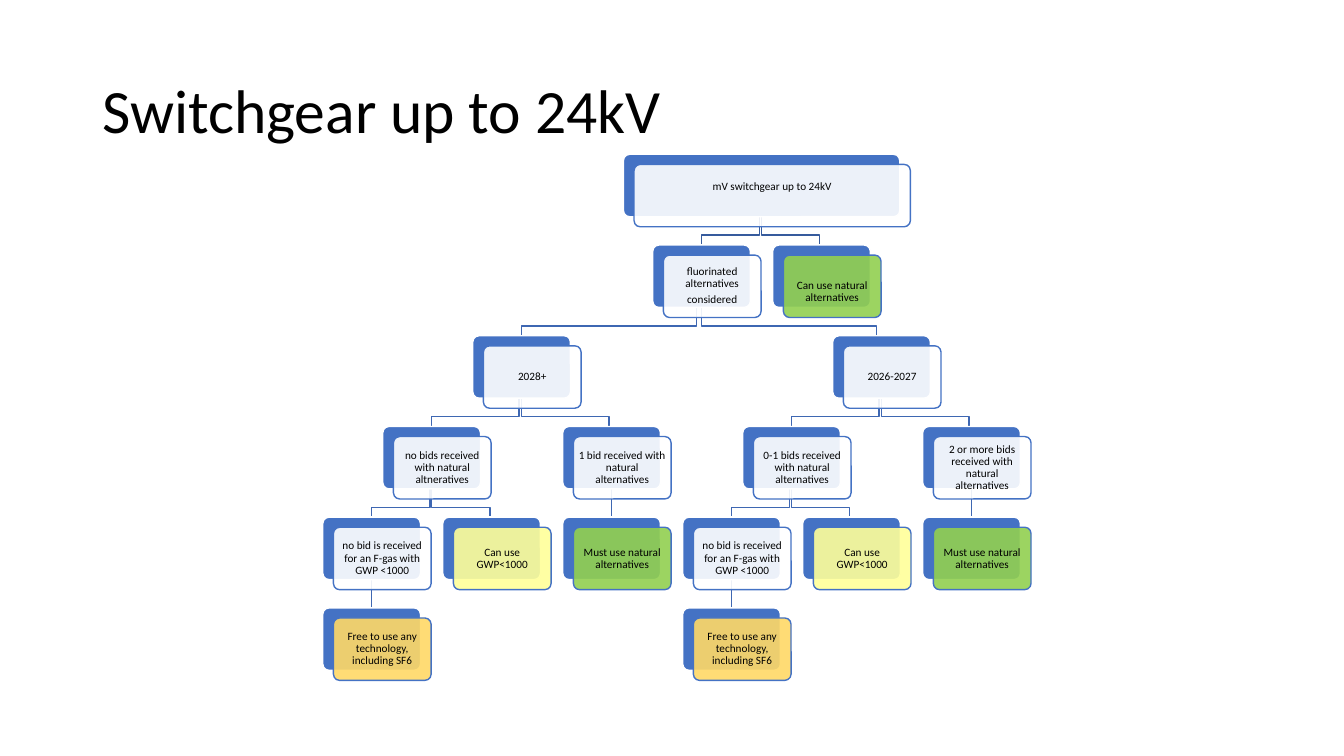
from dataclasses import dataclass, field

from lxml.etree import SubElement
from pptx import Presentation
from pptx.dml.color import RGBColor
from pptx.enum.shapes import MSO_CONNECTOR, MSO_SHAPE
from pptx.enum.text import MSO_ANCHOR, PP_ALIGN
from pptx.oxml.ns import qn
from pptx.util import Pt

COLORS = {
    "text": "000000", "white": "FFFFFF", "blue": "4472C4",
    "root_link": "365B9D", "link": "3E67B2",
    "green": "92D050", "yellow": "FFFF99", "amber": "FFD966",
}
LEFT, TOP = 230.6, 110.2
COL_STEP, ROW_STEP = 85.7, 64.8
BOX_W, BOX_H, ROOT_W = 69.8, 44.6, 197.4
CARD_DX, CARD_DY = 7.6, 7.2
LINK_BEND, LINK_DROP = 13.2, 19.6
LINK_REACH = 0.97


@dataclass
class Node:
    text: str
    fill: str = "white"
    col: float = 0
    children: list = field(default_factory=list)
    width: float = BOX_W
    pad_top: float = 2
    pad_bottom: float = 2

    def __post_init__(self):
        if self.children:
            self.col = (self.children[0].col + self.children[-1].col) / 2

    @property
    def center(self):
        return LEFT + self.col * COL_STEP + BOX_W / 2


class Chart:
    """Draws the decision tree on one slide in a single style."""

    font = "Calibri"

    def __init__(self, slide):
        self.s = slide

    def color(self, name):
        return RGBColor.from_string(COLORS[name])

    def set_text(self, tf, text, size, align):
        tf.word_wrap = True
        tf.vertical_anchor = MSO_ANCHOR.MIDDLE
        for i, line in enumerate(text.split("\n")):
            p = tf.add_paragraph() if i else tf.paragraphs[0]
            p.text = line
            p.alignment = align
            p.line_spacing = 0.9
            p.font.size = Pt(size)
            p.font.name = self.font
            p.font.color.rgb = self.color("text")

    def title(self, text):
        sp = self.s.shapes.add_textbox(Pt(66), Pt(28.8), Pt(828), Pt(104.4))
        self.set_text(sp.text_frame, text, 44, PP_ALIGN.LEFT)

    def panel(self, x, y, width, fill, line):
        sp = self.s.shapes.add_shape(MSO_SHAPE.ROUNDED_RECTANGLE,
                                     Pt(x), Pt(y), Pt(width), Pt(BOX_H))
        sp.adjustments[0] = 0.1
        sp.shadow.inherit = False
        sp.fill.solid()
        sp.fill.fore_color.rgb = self.color(fill)
        sp.line.color.rgb = self.color(line)
        sp.line.width = Pt(1)
        return sp

    def box(self, node, y):
        """Blue panel with a slightly transparent text card in front."""
        x = node.center - node.width / 2
        self.panel(x, y, node.width, "blue", "white")
        card = self.panel(x + CARD_DX, y + CARD_DY, node.width, node.fill, "blue")
        rgb = card._element.xpath("./p:spPr/a:solidFill/a:srgbClr")[0]
        SubElement(rgb, qn("a:alpha"), val="90000")
        tf = card.text_frame
        self.set_text(tf, node.text, 8, PP_ALIGN.CENTER)
        tf.margin_left = tf.margin_right = Pt(2)
        tf.margin_top, tf.margin_bottom = Pt(node.pad_top), Pt(node.pad_bottom)
        for p in tf.paragraphs[:-1]:
            p.space_after = Pt(2.8)

    def link(self, parent, child, y, color):
        """Straight line to an only child, otherwise an elbow."""
        start, end = parent.center, child.center
        if start == end:
            sp = self.s.shapes.add_connector(MSO_CONNECTOR.STRAIGHT, Pt(start), Pt(y),
                                             Pt(end), Pt(y + LINK_DROP))
        else:
            right = min(start, end) + LINK_REACH * abs(end - start)
            start, end = min(start, right), min(end, right)
            fb = self.s.shapes.build_freeform(Pt(start), Pt(y))
            bend = Pt(y + LINK_BEND)
            fb.add_line_segments([(Pt(start), bend), (Pt(end), bend),
                                  (Pt(end), Pt(y + LINK_DROP))], close=False)
            sp = fb.convert_to_shape()
            sp.fill.background()
        sp.line.color.rgb = self.color(color)
        sp.line.width = Pt(1)
        SubElement(sp._element.spPr, qn("a:effectLst"))

    def links(self, node, row=0):
        for child in node.children:
            self.link(node, child, TOP + row * ROW_STEP + BOX_H,
                      "link" if row else "root_link")
            self.links(child, row + 1)

    def boxes(self, node, row=0):
        self.box(node, TOP + row * ROW_STEP)
        for child in node.children:
            self.boxes(child, row + 1)


def period(years, few_bids, enough_bids, col):
    """Branch for one period, its leaves starting at column col."""
    free = Node("Free to use any technology, including SF6", "amber", col)
    no_f_gas = Node("no bid is received for an F-gas with GWP <1000", children=[free])
    low_gwp = Node("Can use GWP<1000", "yellow", col + 1)
    natural = Node("Must use natural alternatives", "green", col + 2)
    return Node(years, children=[
        Node(few_bids, children=[no_f_gas, low_gwp]),
        Node(enough_bids, children=[natural]),
    ])


def main():
    prs = Presentation()
    prs.slide_width, prs.slide_height = Pt(960), Pt(540)
    chart = Chart(prs.slides.add_slide(prs.slide_layouts[6]))

    fluorinated = Node("fluorinated alternatives\nconsidered", children=[
        period("2028+", "no bids received with natural altneratives",
               "1 bid received with natural alternatives", 0),
        period("2026-2027", "0-1 bids received with natural alternatives",
               "2 or more bids received with natural alternatives", 3),
    ])
    natural = Node("Can use natural alternatives", "green",
                   fluorinated.col + 1, pad_top=10)
    root = Node("mV switchgear up to 24kV", children=[fluorinated, natural],
                width=ROOT_W, pad_bottom=14)

    chart.title("Switchgear up to 24kV")
    chart.links(root)
    chart.boxes(root)
    prs.save("out.pptx")


if __name__ == "__main__":
    main()
